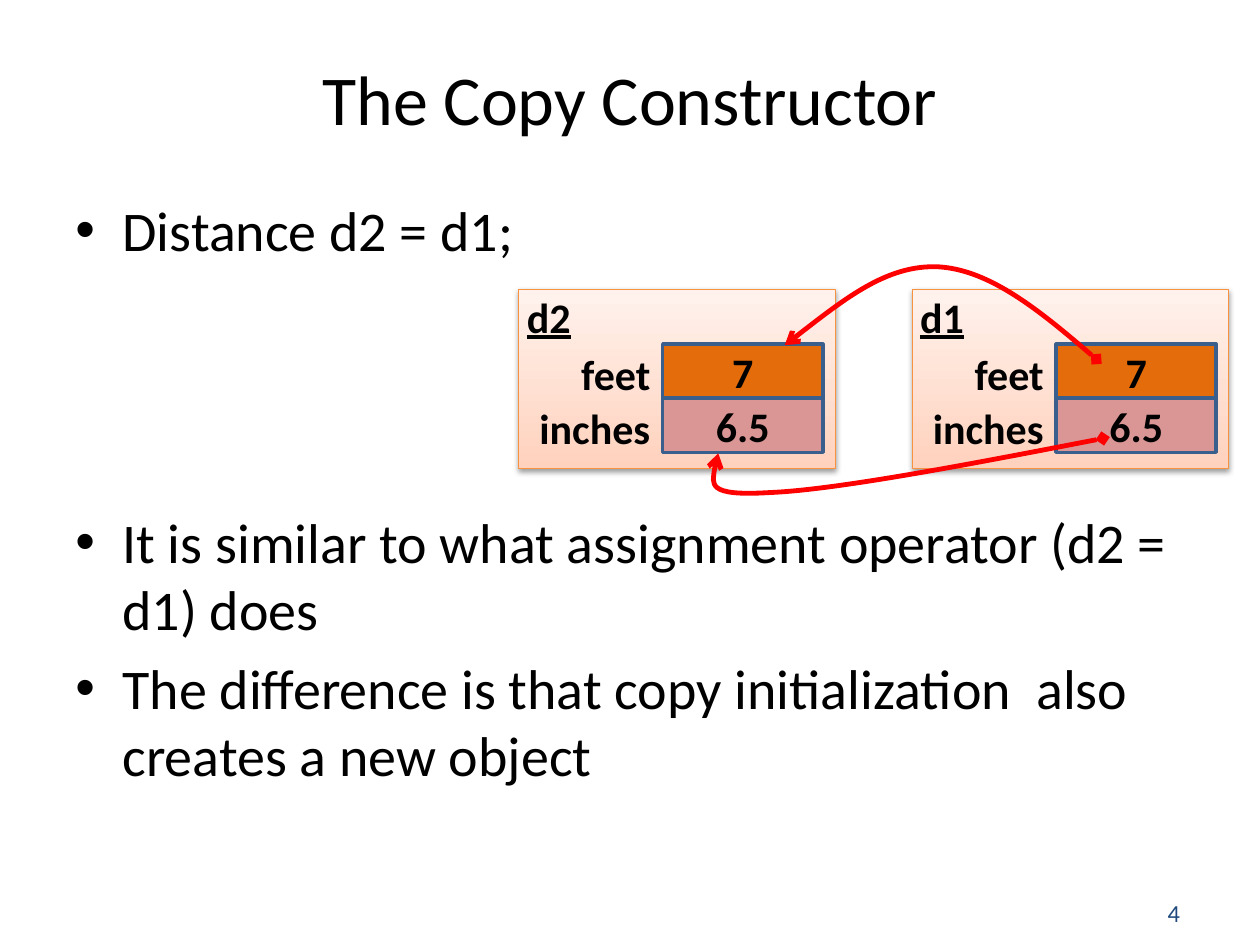
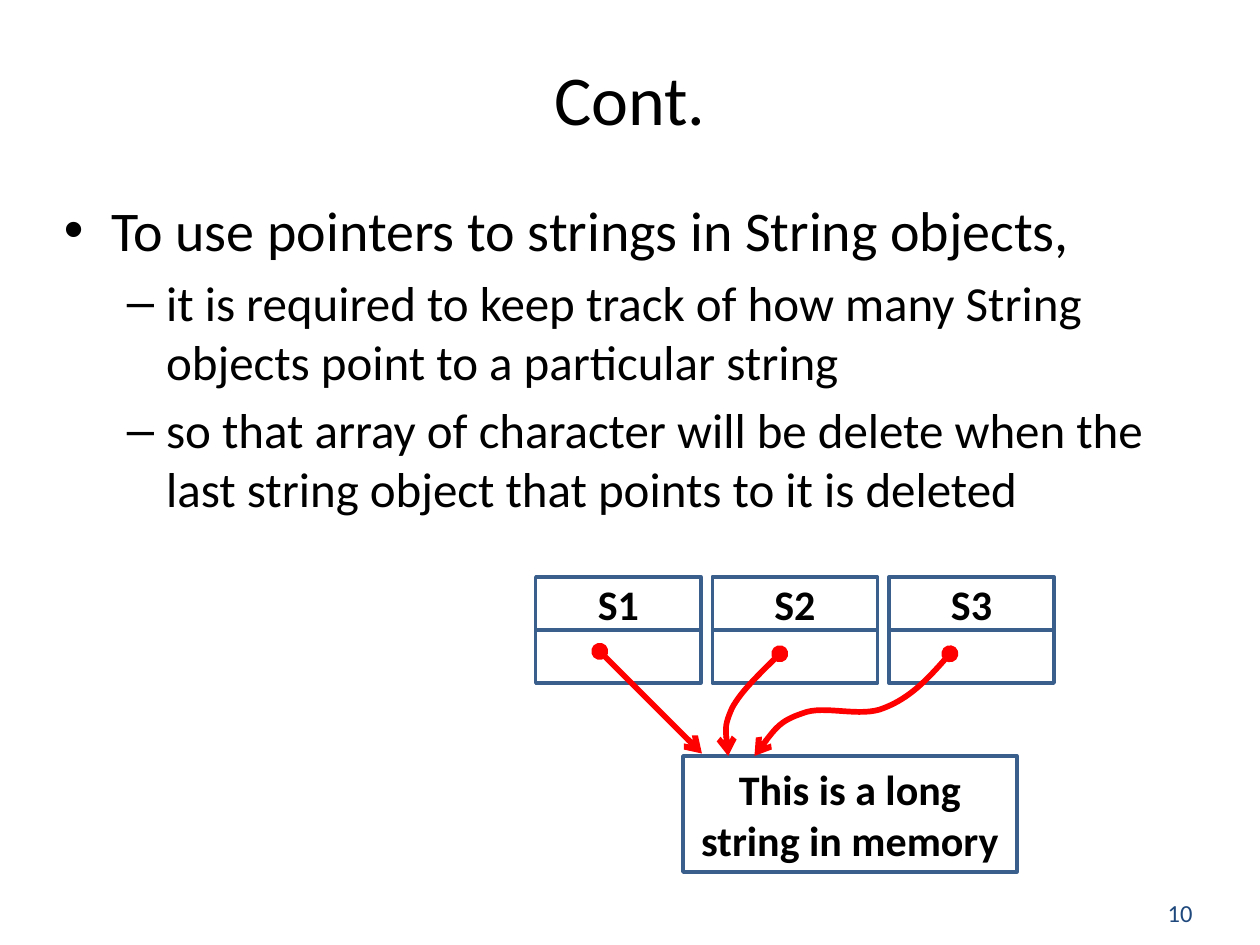
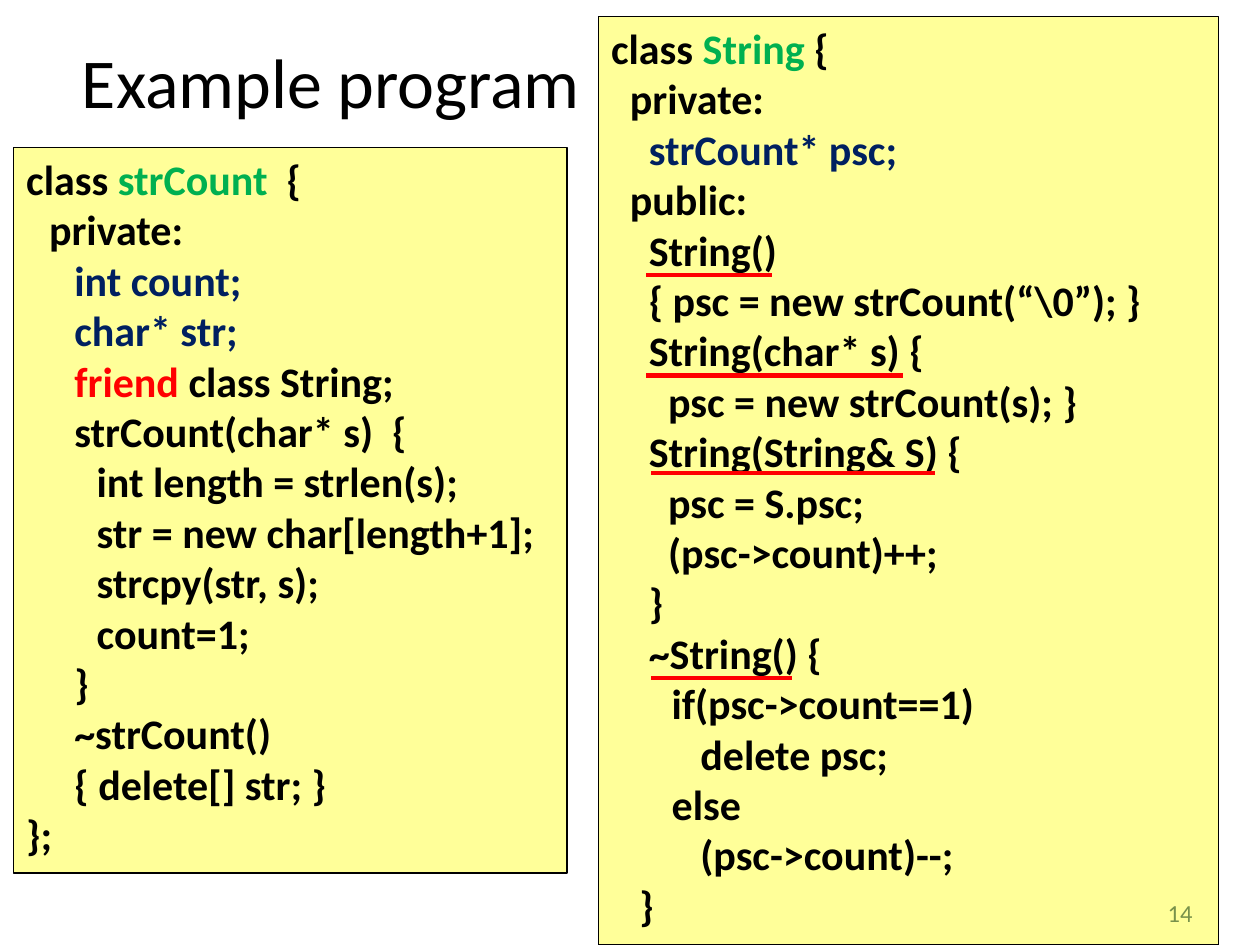
import dataclasses

import lxml.etree
import pptx
import pptx.dml.color
import pptx.enum.dml
import pptx.enum.shapes
import pptx.enum.text
import pptx.oxml.ns
import pptx.util

Cm = pptx.util.Cm
Pt = pptx.util.Pt
qn = pptx.oxml.ns.qn
ALIGN = pptx.enum.text.PP_ALIGN
ANCHOR = pptx.enum.text.MSO_ANCHOR
RECTANGLE = pptx.enum.shapes.MSO_SHAPE.RECTANGLE
STRAIGHT = pptx.enum.shapes.MSO_CONNECTOR.STRAIGHT


@dataclasses.dataclass(frozen=True)
class Theme:
    """Colours, font and type sizes shared by all slides."""

    font: str = "Calibri"
    title_size: float = 40
    body_sizes: tuple = (32, 28)
    label_size: float = 24
    number_size: float = 14
    ink: str = "000000"
    number: str = "1F497D"
    outline: str = "3A5F8C"
    feet: str = "E46C0A"
    inches: str = "D99694"
    object_line: str = "F69240"
    object_low: str = "FFD2BD"
    object_high: str = "FFF2ED"
    code_fill: str = "FFFF00"
    class_name: str = "00B050"
    member: str = "002060"
    accent: str = "FF0000"


THEME = Theme()


@dataclasses.dataclass(frozen=True)
class Box:
    """A rectangle in centimetres."""

    left: float
    top: float
    width: float
    height: float

    def inner(self, left, top, width, height):
        """Return a box placed relative to this one."""
        return Box(self.left + left, self.top + top, width, height)

    def point(self, left, top):
        """Return a slide position for a point relative to this box."""
        return Cm(self.left + left), Cm(self.top + top)

    def lengths(self):
        """Return left, top, width and height as lengths."""
        return Cm(self.left), Cm(self.top), Cm(self.width), Cm(self.height)


TITLE = Box(1.27, 0.97, 22.86, 1.98)
NUMBER = Box(23.29, 17.98, 1.7, 0.84)


def rgb(value):
    """Turn a hex string into a colour."""
    return pptx.dml.color.RGBColor.from_string(value)


def add_node(parent, tag, **attributes):
    """Append a DrawingML element."""
    return lxml.etree.SubElement(parent, qn(tag), attributes)


def style_font(font, size, color=THEME.ink, bold=False, underline=False):
    """Set the typeface, size, colour and weight of a font."""
    font.name = THEME.font
    font.size = Pt(size)
    font.bold = bold
    font.underline = underline
    font.color.rgb = rgb(color)


def style_line(line, color, width):
    """Set the colour and width of a line."""
    line.color.rgb = rgb(color)
    line.width = Pt(width)


def add_text(page, box, text, size, align=ALIGN.LEFT, **style):
    """Add one vertically centred paragraph."""
    frame = page.shapes.add_textbox(*box.lengths()).text_frame
    write_centred(frame, text, size, align, **style)


def write_centred(frame, text, size, align, **style):
    """Write one paragraph in the vertical middle of a frame."""
    frame.word_wrap = True
    frame.vertical_anchor = ANCHOR.MIDDLE
    para = frame.paragraphs[0]
    para.text = text
    para.alignment = align
    style_font(para.font, size, **style)


def add_rectangle(page, box, line, width, fill=None):
    """Add a rectangle without shadow."""
    shape = page.shapes.add_shape(RECTANGLE, *box.lengths())
    shape.shadow.inherit = False
    style_line(shape.line, line, width)
    if fill:
        shape.fill.solid()
        shape.fill.fore_color.rgb = rgb(fill)
    else:
        shape.fill.background()
    return shape


def add_cell(page, box, text="", fill=None):
    """Add an outlined memory cell with a bold value."""
    cell = add_rectangle(page, box, THEME.outline, 2, fill)
    if text:
        write_centred(cell.text_frame, text, THEME.label_size, ALIGN.CENTER, bold=True)


def add_page(deck, title, number, title_box=TITLE):
    """Add a slide with its number and title."""
    page = deck.slides.add_slide(deck.slide_layouts[6])
    add_text(page, NUMBER, number, THEME.number_size, color=THEME.number)
    add_text(page, title_box, title, THEME.title_size, ALIGN.CENTER)
    return page


def add_bullets(page, box, items):
    """Add bullets given as level, text and optional space before in points."""
    frame = page.shapes.add_textbox(*box.lengths()).text_frame
    frame.word_wrap = True
    for index, (level, text, *gap) in enumerate(items):
        para = frame.paragraphs[0] if index == 0 else frame.add_paragraph()
        para.text = text
        para.level = level
        size = THEME.body_sizes[level]
        margin, hanging, mark = ((0.95, 0.95, "•"), (2.06, 0.79, "–"))[level]
        properties = para._p.get_or_add_pPr()
        properties.set("marL", str(Cm(margin)))
        properties.set("indent", str(-Cm(hanging)))
        add_node(properties, "a:buFont", typeface="Arial")
        add_node(properties, "a:buChar", char=mark)
        para.space_before = Pt(gap[0] if gap else size * 0.2)
        style_font(para.font, size)


def style_arrow(arrow, width, head):
    """Make a red line with a marked start and an open arrow at its end."""
    style_line(arrow.line, THEME.accent, width)
    line = arrow.line._get_or_add_ln()
    add_node(line, "a:headEnd", type=head)
    add_node(line, "a:tailEnd", type="arrow")


def add_line(page, start, end):
    """Add a straight connector without shadow."""
    line = page.shapes.add_connector(STRAIGHT, *start, *end)
    add_node(line._element.spPr, "a:effectLst")
    return line


def add_curve(page, box, points, width, head):
    """Add a curved arrow through Bezier points relative to the box."""
    start, *others = [box.point(*point) for point in points]
    builder = page.shapes.build_freeform(*start)
    builder.add_line_segments(others, close=False)
    curve = builder.convert_to_shape()
    curve.shadow.inherit = False
    curve.fill.background()
    style_arrow(curve, width, head)
    outline = curve._element.find(".//" + qn("a:path"))
    segments = outline.findall(qn("a:lnTo"))
    for first in range(0, len(segments), 3):
        bend = add_node(outline, "a:cubicBezTo")
        for segment in segments[first:first + 3]:
            bend.append(segment[0])
            outline.remove(segment)


def add_distance(page, box, name):
    """Draw a Distance object with its feet and inches."""
    panel = add_rectangle(page, box, THEME.object_line, 0.75)
    panel.fill.gradient()
    panel.fill.gradient_angle = 90
    for stop, color in zip(panel.fill.gradient_stops, (THEME.object_low, THEME.object_high)):
        stop.color.rgb = rgb(color)
    effects = panel._element.spPr.find(qn("a:effectLst"))
    shadow = add_node(effects, "a:outerShdw", blurRad="40000", dist="20000",
                      dir="5400000", rotWithShape="0")
    add_node(add_node(shadow, "a:srgbClr", val="000000"), "a:alpha", val="38000")
    split, row = 2.9, 1.09
    members = (("feet", "7", THEME.feet), ("inches", "6.5", THEME.inches))
    for index, (member, value, fill) in enumerate(members):
        top = 1.11 + index * row
        add_cell(page, box.inner(split, top, 3.23, row), value, fill)
        add_text(page, box.inner(0, top + 0.04, split, row), member,
                 THEME.label_size, ALIGN.RIGHT, bold=True)
    add_text(page, box.inner(-0.09, 0, 3.38, row), name, THEME.label_size,
             bold=True, underline=True)


def add_copy_diagram(page, box):
    """Show the members of d1 copied into d2."""
    for name, left in (("d1", 8.39), ("d2", 0.46)):
        add_distance(page, box.inner(left, 0.83, 6.38, 3.61), name)
    feet_curve = ((12.1, 2.24), (11.03, 1.32), (9.96, 0.44), (8.92, 0.38),
                  (7.88, 0.33), (6.87, 1.15), (5.82, 1.96))
    inches_curve = ((12.23, 3.84), (9.51, 4.37), (6.81, 4.88), (5.52, 4.93),
                    (4.22, 5.01), (4.35, 4.58), (4.48, 4.14))
    for points in (feet_curve, inches_curve):
        add_curve(page, box, points, 2.75, "diamond")


def add_pointer_diagram(page, box):
    """Show three String objects pointing to one string."""
    width, height = 3.33, 1.07
    for index, name in enumerate(("S1", "S2", "S3")):
        left = 0.8 + index * 3.56
        add_cell(page, box.inner(left, 0.63, width, height), name)
        add_cell(page, box.inner(left, 0.63 + height, width, height))
    add_cell(page, box.inner(3.77, 4.24, 6.73, 2.34), "This is a long string in memory")
    first = add_line(page, box.point(2.09, 2.13), box.point(4.15, 4.19))
    style_arrow(first, 3.25, "oval")
    second_curve = ((5.72, 2.18), (5.34, 2.56), (4.94, 2.94), (4.76, 3.27),
                    (4.6, 3.63), (4.63, 3.94), (4.68, 4.24))
    third_curve = ((9.15, 2.18), (8.75, 2.64), (8.34, 3.07), (7.83, 3.27),
                   (7.35, 3.48), (6.61, 3.2), (6.18, 3.38),
                   (5.72, 3.53), (5.47, 3.88), (5.21, 4.24))
    for points in (second_curve, third_curve):
        add_curve(page, box, points, 3.25, "oval")


def add_code(page, box, lines, underlines=()):
    """Add a code panel from indents and coloured spans, with red underlines."""
    panel = add_rectangle(page, box, THEME.ink, 0.75, THEME.code_fill)
    color_node = panel._element.spPr.find(qn("a:solidFill"))[0]
    add_node(color_node, "a:alpha", val="40000")
    frame = panel.text_frame
    frame.word_wrap = True
    frame.vertical_anchor = ANCHOR.TOP
    frame.auto_size = pptx.enum.text.MSO_AUTO_SIZE.SHAPE_TO_FIT_TEXT
    for index, (indent, *spans) in enumerate(lines):
        para = frame.paragraphs[0] if index == 0 else frame.add_paragraph()
        para.alignment = ALIGN.LEFT
        para._p.get_or_add_pPr().set("marL", str(Cm(indent)))
        style_font(para.font, THEME.label_size, bold=True)
        for text, color in spans:
            span = para.add_run()
            span.text = text
            if color != THEME.ink:
                span.font.color.rgb = rgb(color)
    for left, top, length in underlines:
        line = add_line(page, box.point(left, top), box.point(left + length, top))
        style_line(line.line, THEME.accent, 2.5)


def plain(indent, *texts):
    """Return black code lines that share an indent."""
    return [(indent, (text, THEME.ink)) for text in texts]


def member(indent, *texts):
    """Return data member lines that share an indent."""
    return [(indent, (text, THEME.member)) for text in texts]


def class_head(name, brace):
    """Return the opening line of a class."""
    return [(0, ("class ", THEME.ink), (name, THEME.class_name), (brace, THEME.ink))]


def build_copy_slide(deck):
    """Build the slide on the copy constructor."""
    page = add_page(deck, "The Copy Constructor", "4")
    add_bullets(page, Box(1.27, 3.81, 22.86, 13.21), (
        (0, "Distance d2 = d1;"),
        (0, "It is similar to what assignment operator (d2 = d1) does", 140),
        (0, "The difference is that copy initialization  also creates a new object"),
    ))
    add_copy_diagram(page, Box(10, 5, 15, 5))


def build_pointer_slide(deck):
    """Build the slide on pointers to strings."""
    page = add_page(deck, "Cont.", "10")
    add_bullets(page, Box(1.04, 3.81, 22.86, 6.99), (
        (0, "To use pointers to strings in String objects,"),
        (1, "it is required to keep track of how many String objects "
            "point to a particular string"),
        (1, "so that array of character will be delete when the last "
            "string object that points to it is deleted"),
    ))
    add_pointer_diagram(page, Box(10, 11, 12, 7))


def build_program_slide(deck):
    """Build the slide with the example program."""
    page = add_page(deck, "Example program", "14", Box(1.27, 0.64, 10.8, 1.98))
    add_code(page, Box(0.28, 2.97, 11.15, 14.63), [
        *class_head("strCount", "  {"),
        *plain(0.46, "private:"),
        *member(0.97, "int count;", "char* str;"),
        (0.97, ("friend", THEME.accent), (" class String;", THEME.ink)),
        *plain(0.97, "strCount(char* s)  {"),
        *plain(1.42, "int length = strlen(s);",
               "str = new char[length+1]; strcpy(str, s);", "count=1;"),
        *plain(0.97, "}", "~strCount()", "{ delete[] str; }"),
        *plain(0, "};"),
    ])
    add_code(page, Box(12.07, 0.33, 12.5, 18.72), [
        *class_head("String", " {"),
        *plain(0.38, "private:"),
        *member(0.76, "strCount* psc;"),
        *plain(0.38, "public:"),
        *plain(0.76, "String()", "{ psc = new strCount(“\\0”); }", "String(char* s) {"),
        *plain(1.15, "psc = new strCount(s); }"),
        *plain(0.76, "String(String& S) {"),
        *plain(1.15, "psc = S.psc;", "(psc->count)++;"),
        *plain(0.76, "}", "~String() {"),
        *plain(1.22, "if(psc->count==1)"),
        *plain(1.8, "delete psc;"),
        *plain(1.22, "else"),
        *plain(1.8, "(psc->count)--;"),
        *plain(0.57, "}"),
    ], ((0.96, 5.21, 2.54), (0.96, 7.24, 5.18), (1.06, 9.2, 5.72), (1.06, 13.34, 2.84)))


def main():
    """Build and save the deck."""
    deck = pptx.Presentation()
    deck.slide_width, deck.slide_height = Cm(25.4), Cm(19.05)
    build_copy_slide(deck)
    build_pointer_slide(deck)
    build_program_slide(deck)
    deck.save("out.pptx")


if __name__ == "__main__":
    main()
